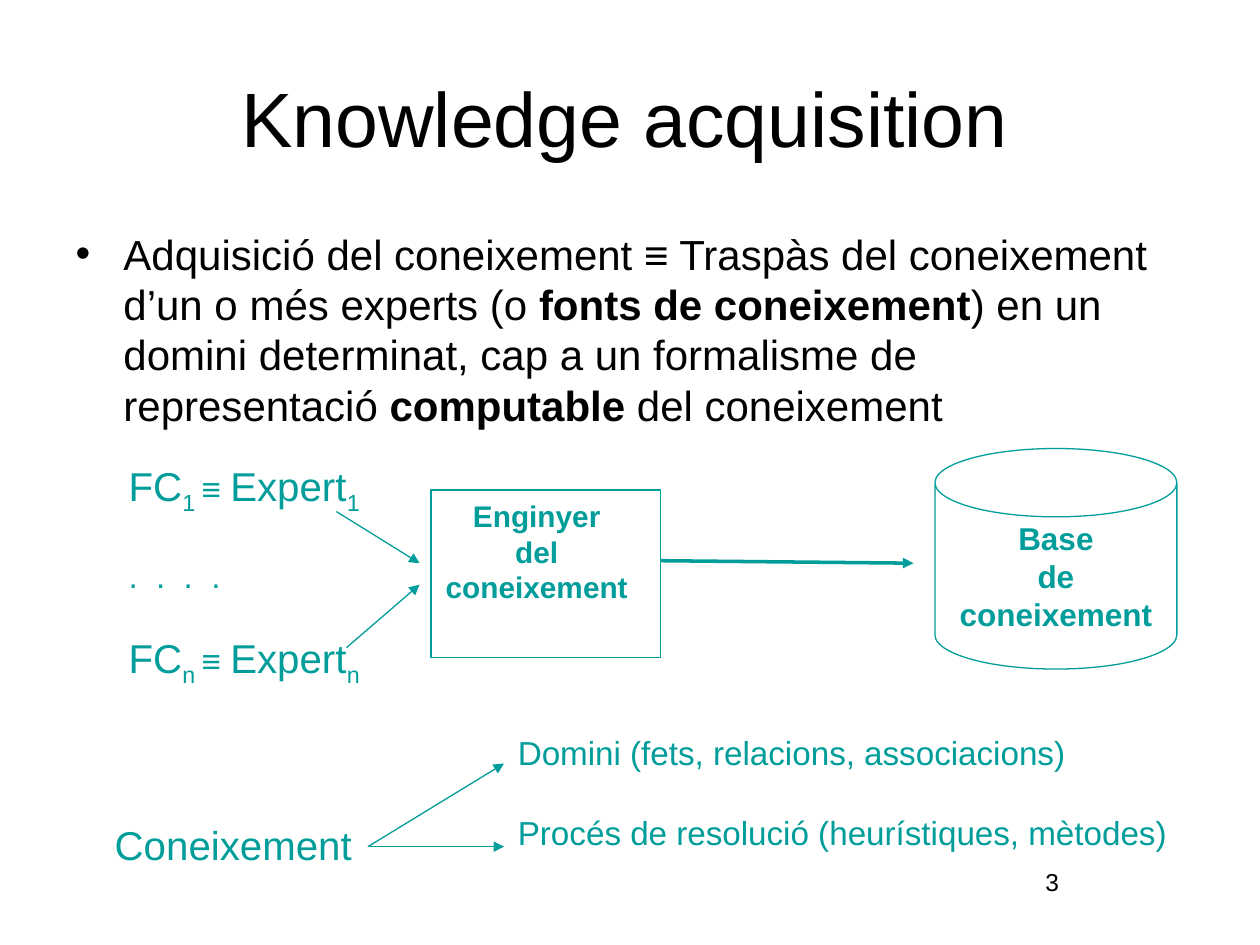
from dataclasses import dataclass

from lxml.etree import SubElement
from pptx import Presentation
from pptx.dml.color import RGBColor
from pptx.enum.shapes import MSO_CONNECTOR, MSO_SHAPE
from pptx.enum.text import MSO_ANCHOR, MSO_AUTO_SIZE, PP_ALIGN
from pptx.oxml.ns import qn
from pptx.util import Inches, Pt


@dataclass(frozen=True)
class Theme:
    font: str = "Arial"
    ink: RGBColor = RGBColor(0x00, 0x00, 0x00)
    teal: RGBColor = RGBColor(0x00, 0x9D, 0x9A)
    paper: RGBColor = RGBColor(0xFF, 0xFF, 0xFF)
    title: int = 44
    body: int = 24
    term: int = 23
    detail: int = 19
    base: int = 18
    engineer: int = 17
    number: int = 14
    thin: float = 0.75
    thick: float = 2


@dataclass(frozen=True)
class Box:
    left: float
    top: float
    width: float
    height: float

    def inside(self, dx, dy, width, height):
        return Box(self.left + dx, self.top + dy, width, height)

    def lengths(self):
        return [Inches(v) for v in (self.left, self.top, self.width, self.height)]


THEME = Theme()


def style_run(run, size, color, bold=False, subscript=False):
    run.font.name = THEME.font
    run.font.size = Pt(size)
    run.font.color.rgb = color
    run.font.bold = bold
    if subscript:
        run.font._element.set("baseline", "-26000")


def set_margins(frame, left=0, top=0, right=0, bottom=0):
    frame.margin_left, frame.margin_top = Inches(left), Inches(top)
    frame.margin_right, frame.margin_bottom = Inches(right), Inches(bottom)


def place_placeholder(placeholder, box):
    placeholder.left, placeholder.top, placeholder.width, placeholder.height = box.lengths()
    frame = placeholder.text_frame
    frame.auto_size = MSO_AUTO_SIZE.NONE
    set_margins(frame, 0.06, 0.06, 0.14, 0.06)
    return frame


def add_label(slide, box, text, size, color=THEME.teal, align=PP_ALIGN.LEFT):
    frame = slide.shapes.add_textbox(*box.lengths()).text_frame
    set_margins(frame, left=0.04)
    frame.word_wrap = False
    frame.text = text
    frame.paragraphs[0].alignment = align
    style_run(frame.paragraphs[0].runs[0], size, color)


def add_node(slide, preset, box, lines, size, anchor):
    node = slide.shapes.add_shape(preset, *box.lengths())
    node.shadow.inherit = False
    node.fill.solid()
    node.fill.fore_color.rgb = THEME.paper
    node.line.color.rgb = THEME.teal
    node.line.width = Pt(THEME.thin)
    frame = node.text_frame
    frame.word_wrap = True
    frame.vertical_anchor = anchor
    frame.text = "\n".join(lines)
    for paragraph in frame.paragraphs:
        paragraph.alignment = PP_ALIGN.CENTER
        style_run(paragraph.runs[0], size, THEME.teal, bold=True)
    return node


def add_arrow(slide, box, start, end, width=THEME.thin):
    points = [Inches(v) for dx, dy in (start, end) for v in (box.left + dx, box.top + dy)]
    arrow = slide.shapes.add_connector(MSO_CONNECTOR.STRAIGHT, *points)
    arrow.line.color.rgb = THEME.teal
    arrow.line.width = Pt(width)
    SubElement(arrow.line._get_or_add_ln(), qn("a:tailEnd"), type="triangle")
    SubElement(arrow._element.spPr, qn("a:effectLst"))


def add_title(slide, box):
    frame = place_placeholder(slide.shapes.title, box)
    frame.vertical_anchor = MSO_ANCHOR.MIDDLE
    frame.text = "Knowledge acquisition"
    frame.paragraphs[0].alignment = PP_ALIGN.CENTER
    style_run(frame.paragraphs[0].runs[0], THEME.title, THEME.ink)


def add_definition(slide, box):
    frame = place_placeholder(slide.placeholders[1], box)
    definition = frame.paragraphs[0]
    definition.space_before = Pt(7)
    properties = definition._p.get_or_add_pPr()
    properties.set("marL", str(Inches(0.42)))
    properties.set("indent", str(Inches(-0.38)))
    for text, bold in (
        ("Adquisició del coneixement ≡ Traspàs del coneixement d’un o més experts (o ", False),
        ("fonts de coneixement", True),
        (") en un domini determinat, cap a un formalisme de representació ", False),
        ("computable", True),
        (" del coneixement", False),
    ):
        run = definition.add_run()
        run.text = text
        style_run(run, THEME.body, THEME.ink, bold)


def add_expert(paragraph, index):
    for text, size, subscript in (
        ("FC", THEME.term, False),
        (index + " ", THEME.term, True),
        ("≡ ", THEME.detail, False),
        ("Expert", THEME.term, False),
        (index, THEME.term, True),
    ):
        run = paragraph.add_run()
        run.text = text
        style_run(run, size, THEME.teal, subscript=subscript)


def add_sources(slide, box):
    frame = slide.shapes.add_textbox(*box.lengths()).text_frame
    set_margins(frame, left=0.04)
    frame.word_wrap = False
    first, dots, last = frame.paragraphs[0], frame.add_paragraph(), frame.add_paragraph()
    add_expert(first, "1")
    dots.text = ".  .  .  ."
    style_run(dots.runs[0], THEME.detail, THEME.teal)
    add_expert(last, "n")
    for paragraph in (dots, last):
        paragraph.space_before = Pt(22)


def add_transfer(slide, box):
    add_sources(slide, box.inside(0, 0.1, 2.02, 1.73))
    engineer = add_node(slide, MSO_SHAPE.RECTANGLE, box.inside(2.44, 0.33, 1.82, 1.33),
                        ("Enginyer", "del", "coneixement"), THEME.engineer, MSO_ANCHOR.TOP)
    set_margins(engineer.text_frame, top=0.06, right=0.14)
    knowledge_base = add_node(slide, MSO_SHAPE.CAN, box.inside(6.44, 0, 1.92, 1.75),
                              ("Base", "de", "coneixement"), THEME.base, MSO_ANCHOR.MIDDLE)
    knowledge_base.adjustments[0] = 0.31
    set_margins(knowledge_base.text_frame)
    add_arrow(slide, box, (1.69, 0.5), (2.35, 0.91))
    add_arrow(slide, box, (1.77, 1.58), (2.35, 1.08))
    add_arrow(slide, box, (4.26, 0.89), (6.27, 0.91), THEME.thick)


def add_knowledge_kinds(slide, box):
    add_label(slide, box.inside(0, 0.7, 1.99, 0.39), "Coneixement", THEME.term)
    for text, top, width, tip in (
        ("Domini (fets, relacions, associacions)", 0, 4.57, 0.25),
        ("Procés de resolució (heurístiques, mètodes)", 0.64, 5.32, 0.91),
    ):
        add_label(slide, box.inside(3.2, top, width, 0.32), text, THEME.detail)
        add_arrow(slide, box, (2.05, 0.91), (3.13, tip))


def main():
    presentation = Presentation()
    presentation.slide_width, presentation.slide_height = Inches(10), Inches(7.5)
    slide = presentation.slides.add_slide(presentation.slide_layouts[1])
    add_title(slide, Box(0.5, 0.1, 9, 1.65))
    add_definition(slide, Box(0.5, 1.75, 9, 5.75))
    add_transfer(slide, Box(0.98, 3.56, 8.36, 1.83))
    add_knowledge_kinds(slide, Box(0.87, 5.81, 8.52, 1.09))
    add_label(slide, Box(8.16, 6.88, 0.34, 0.24), "3", THEME.number, THEME.ink, PP_ALIGN.CENTER)
    presentation.save("out.pptx")


if __name__ == "__main__":
    main()
